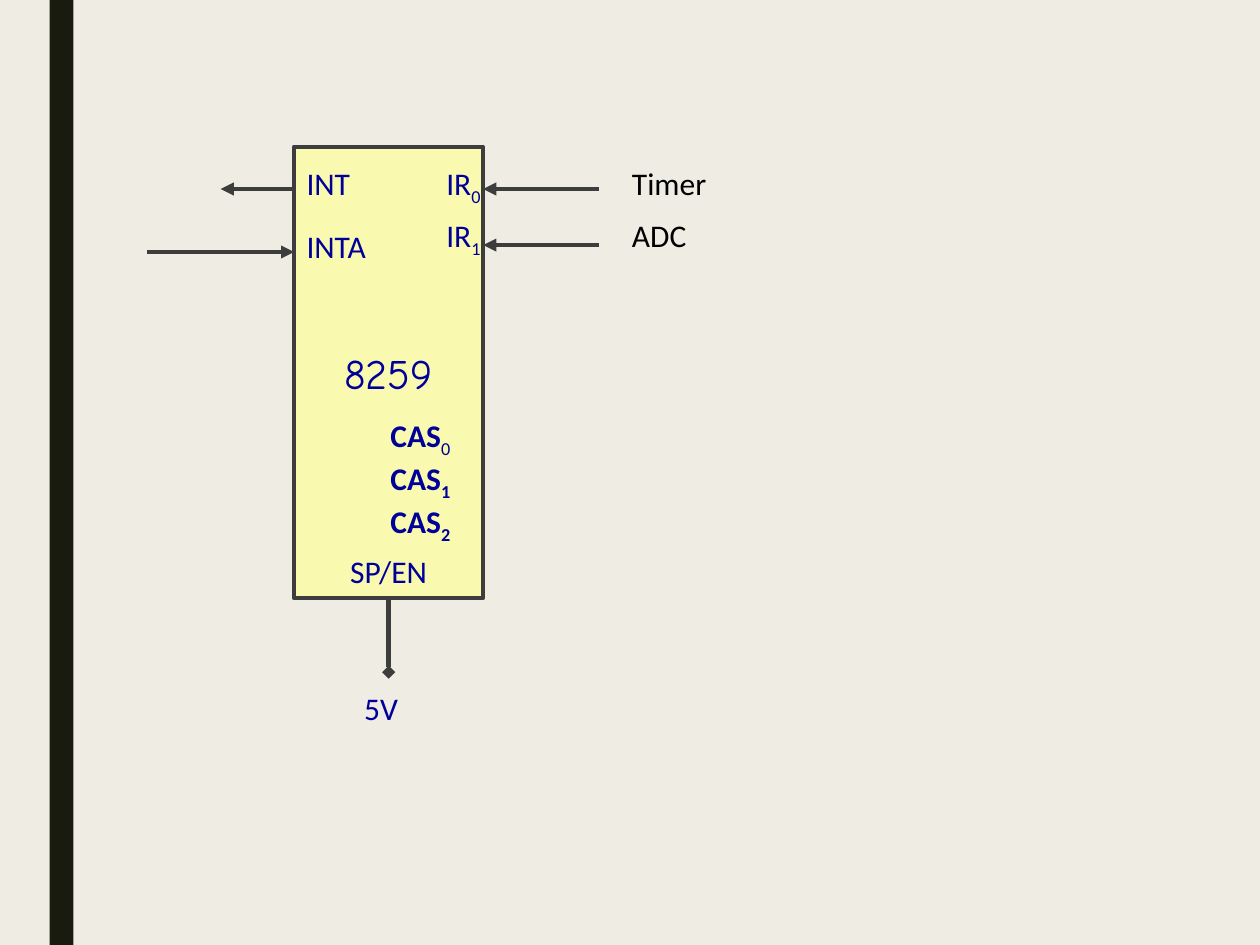
from dataclasses import dataclass

from lxml import etree
from pptx import Presentation
from pptx.dml.color import RGBColor
from pptx.enum import shapes, text
from pptx.oxml import ns
from pptx.util import Cm, Pt

PAPER = RGBColor(0xEF, 0xED, 0xE3)
BAR = RGBColor(0x19, 0x1B, 0x0E)
CHIP_FILL = RGBColor(0xFF, 0xFF, 0x99)
WIRE = RGBColor(0x3D, 0x3D, 0x3D)
NAVY = RGBColor(0x00, 0x00, 0x99)
BLACK = RGBColor(0x00, 0x00, 0x00)

LEFT, CENTER, RIGHT = text.PP_ALIGN.LEFT, text.PP_ALIGN.CENTER, text.PP_ALIGN.RIGHT

# Chip edges and pin rows, in centimetres
CHIP_LEFT, CHIP_TOP, CHIP_WIDTH, CHIP_HEIGHT = 5.93, 2.96, 3.81, 9.1
CHIP_RIGHT = CHIP_LEFT + CHIP_WIDTH
CHIP_BOTTOM = CHIP_TOP + CHIP_HEIGHT
CHIP_MIDDLE = CHIP_LEFT + CHIP_WIDTH / 2
ROW_0, ROW_1 = 3.18, 4.23
INPUT_START, INPUT_LABEL_LEFT = 12.07, 12.49


@dataclass(frozen=True)
class Piece:
    wording: str
    bold: bool = False
    subscript: bool = False


@dataclass(frozen=True)
class Label:
    pieces: tuple[Piece, ...]
    left: float
    top: float
    width: float
    height: float = 1.02
    align: text.PP_ALIGN = LEFT
    color: RGBColor = NAVY


@dataclass(frozen=True)
class Wire:
    start: tuple[float, float]
    end: tuple[float, float]
    head: str = "triangle"


def interrupt_pin(number: int, top: float, height: float) -> Label:
    pieces = (Piece("IR"), Piece(str(number), subscript=True))
    return Label(pieces, 8.04, top, 1.9, height, RIGHT)


CASCADE = (
    Piece("CAS", bold=True), Piece("0 ", subscript=True),
    Piece("CAS", bold=True), Piece("1", bold=True, subscript=True),
    Piece(" CAS", bold=True), Piece("2", bold=True, subscript=True),
)

LABELS = (
    interrupt_pin(0, ROW_0, 1.02),
    interrupt_pin(1, ROW_1, 1.12),
    Label((Piece("INT"),), CHIP_LEFT, ROW_0, 2.33),
    Label((Piece("INTA"),), CHIP_LEFT, 4.45, 2.97),
    Label(CASCADE, 7.62, 8.26, 2.33, 2.57),
    Label((Piece("SP/EN"),), CHIP_LEFT, 11.01, CHIP_WIDTH, align=CENTER),
    Label((Piece("5V"),), 7.09, 13.76, 2.97),
    Label((Piece("Timer"),), INPUT_LABEL_LEFT, ROW_0, 4.66, color=BLACK),
    Label((Piece("ADC"),), INPUT_LABEL_LEFT, ROW_1, 4.66, 1.12, color=BLACK),
)

WIRES = (
    Wire((INPUT_START, 3.81), (CHIP_RIGHT, 3.81)),
    Wire((INPUT_START, 4.94), (CHIP_RIGHT, 4.94)),
    Wire((CHIP_LEFT, 3.81), (4.45, 3.81)),
    Wire((2.96, 5.08), (CHIP_LEFT, 5.08)),
    Wire((CHIP_MIDDLE, CHIP_BOTTOM), (CHIP_MIDDLE, 13.55), "diamond"),
)


def write_text(frame, pieces: tuple[Piece, ...], *, size: int = 18,
               font: str = "Calibri", color: RGBColor = NAVY,
               align: text.PP_ALIGN = LEFT, wrap: bool = True) -> None:
    frame.word_wrap = wrap
    paragraph = frame.paragraphs[0]
    paragraph.alignment = align
    for piece in pieces:
        run = paragraph.add_run()
        run.text = piece.wording
        run.font.name = font
        run.font.size = Pt(size)
        run.font.bold = piece.bold
        run.font.color.rgb = color
        if piece.subscript:
            run._r.get_or_add_rPr().set("baseline", "-25000")


def add_block(slide, left: float, top: float, width: float, height: float,
              fill: RGBColor):
    """Add a plain rectangle without outline or shadow."""
    block = slide.shapes.add_shape(shapes.MSO_SHAPE.RECTANGLE,
                                   Cm(left), Cm(top), Cm(width), Cm(height))
    block.shadow.inherit = False
    block.fill.solid()
    block.fill.fore_color.rgb = fill
    block.line.fill.background()
    return block


def style_line(line) -> None:
    line.color.rgb = WIRE
    line.width = Pt(2.5)


def add_chip(slide) -> None:
    chip = add_block(slide, CHIP_LEFT, CHIP_TOP, CHIP_WIDTH, CHIP_HEIGHT, CHIP_FILL)
    fill_color = chip._element.spPr.find(ns.qn("a:solidFill"))[0]
    etree.SubElement(fill_color, ns.qn("a:alpha"), val="68000")
    style_line(chip.line)
    chip.text_frame.vertical_anchor = text.MSO_ANCHOR.MIDDLE
    write_text(chip.text_frame, (Piece("8259"),), size=24, font="Comic Neue",
               align=CENTER, wrap=False)


def add_wire(slide, wire: Wire) -> None:
    connector = slide.shapes.add_connector(
        shapes.MSO_CONNECTOR.STRAIGHT, *map(Cm, wire.start + wire.end))
    style_line(connector.line)
    etree.SubElement(connector.line._get_or_add_ln(), ns.qn("a:tailEnd"), type=wire.head)
    etree.SubElement(connector._element.spPr, ns.qn("a:effectLst"))


def add_label(slide, label: Label) -> None:
    box = slide.shapes.add_textbox(Cm(label.left), Cm(label.top),
                                   Cm(label.width), Cm(label.height))
    box.text_frame.auto_size = text.MSO_AUTO_SIZE.SHAPE_TO_FIT_TEXT
    write_text(box.text_frame, label.pieces, color=label.color, align=label.align)


def main() -> None:
    deck = Presentation()
    deck.slide_width, deck.slide_height = Cm(25.4), Cm(19.05)
    slide = deck.slides.add_slide(deck.slide_layouts[6])
    slide.background.fill.solid()
    slide.background.fill.fore_color.rgb = PAPER

    add_block(slide, 1, 0, 0.48, 19.05, BAR)
    add_chip(slide)
    for wire in WIRES:
        add_wire(slide, wire)
    for label in LABELS:
        add_label(slide, label)
    deck.save("out.pptx")


if __name__ == "__main__":
    main()
